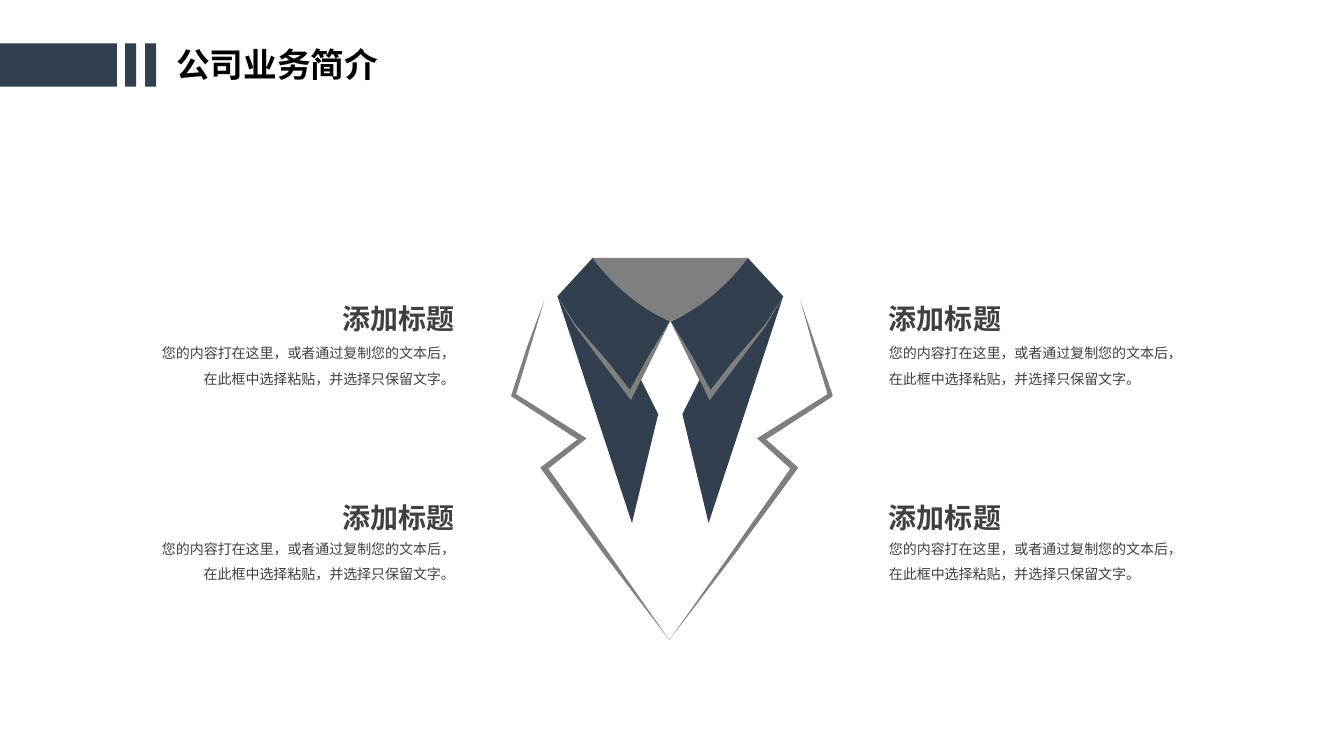
from dataclasses import dataclass

from pptx import Presentation
from pptx import util as u
from pptx.dml import color
from pptx.enum import shapes, text

CELL = u.Inches(0.1)
COLUMNS, ROWS = 133.33, 75
AXIS = 66.5
NAVY, GRAY, INK, BLACK = "323F4F", "7F7F7F", "404040", "000000"
HEADING = "添加标题"
BODY = "您的内容打在这里，或者通过复制您的文本后，在此框中选择粘贴，并选择只保留文字。"

Point = tuple[float, float]


@dataclass(frozen=True)
class Label:
    content: str
    column: float
    row: float
    columns: float
    rows: float
    size: int
    bold: bool = False
    hue: str = INK
    align: text.PP_ALIGN = text.PP_ALIGN.LEFT
    spacing: float = 1.0


@dataclass(frozen=True)
class Side:
    heading_column: float
    body_column: float
    body_columns: float
    heading_align: text.PP_ALIGN
    body_align: text.PP_ALIGN


@dataclass(frozen=True)
class Patch:
    points: list[Point]
    hue: str


@dataclass(frozen=True)
class Bar:
    column: float
    columns: float


def cells(count: float) -> int:
    return round(count * CELL)


def rgb(hue: str) -> color.RGBColor:
    return color.RGBColor.from_string(hue)


def curve(a: Point, b: Point, c: Point, d: Point, steps: int = 24) -> list[Point]:
    points = []
    for step in range(steps + 1):
        t = step / steps
        s = 1 - t
        weights = (s**3, 3 * s * s * t, 3 * s * t * t, t**3)
        x, y = (sum(w * p[i] for w, p in zip(weights, (a, b, c, d))) for i in (0, 1))
        points.append((x, y))
    return points


def mirror(points: list[Point]) -> list[Point]:
    return [(2 * AXIS - x, y) for x, y in points]


def paint(shape, hue: str) -> None:
    shape.shadow.inherit = False
    shape.fill.solid()
    shape.fill.fore_color.rgb = rgb(hue)
    shape.line.fill.background()


def draw_label(page, label: Label) -> None:
    box = page.shapes.add_textbox(
        cells(label.column), cells(label.row), cells(label.columns), cells(label.rows))
    frame = box.text_frame
    frame.word_wrap = True
    frame.auto_size = text.MSO_AUTO_SIZE.SHAPE_TO_FIT_TEXT
    para = frame.paragraphs[0]
    para.text = label.content
    para.alignment = label.align
    para.line_spacing = label.spacing
    para.font.name = "Arial"
    para.font.size = u.Pt(label.size)
    para.font.bold = label.bold
    para.font.color.rgb = rgb(label.hue)


def draw_patch(page, patch: Patch) -> None:
    start, *rest = [(cells(x), cells(y)) for x, y in patch.points]
    builder = page.shapes.build_freeform(*start)
    builder.add_line_segments(rest, close=True)
    paint(builder.convert_to_shape(), patch.hue)


def draw_bar(page, bar: Bar) -> None:
    shape = page.shapes.add_shape(
        shapes.MSO_SHAPE.RECTANGLE,
        cells(bar.column), cells(4.3), cells(bar.columns), cells(4.3))
    paint(shape, NAVY)


ALIGN = text.PP_ALIGN
SIDES = [
    Side(87.2, 87.2, 32.1, ALIGN.JUSTIFY, ALIGN.LEFT),
    Side(30.2, 14.8, 31.3, ALIGN.RIGHT, ALIGN.RIGHT),
]
HEADING_AND_BODY_ROWS = [(27.8, 32.9), (47.5, 52.3)]

LEFT_LAPEL = [
    (54, 29.8), (52.3, 34.4), (50.7, 39.3), (57.3, 43.6), (53.6, 46.4),
    (60, 55.1), (66.4, 63.5), (60.4, 54.9), (54.4, 46.5), (58.2, 43.5),
    (51.2, 39.1), (52.6, 34.5),
]
RIGHT_LAPEL = [
    (79.4, 29.8), (81, 34.5), (82.6, 39.2), (82.5, 39.4), (76, 43.6),
    (79.2, 46.4), (72.8, 55.1), (66.4, 63.5), (72.5, 54.9), (78.4, 46.5),
    (75.1, 43.5), (82.1, 39.1), (80.7, 34.5),
]
COLLAR_TOP, COLLAR_TIP = (58.8, 25.6), (66.45, 31.9)
LINING = (
    curve((74.2, 25.6), (73.3, 27.7), (72.1, 29.5), COLLAR_TIP)
    + curve(COLLAR_TIP, COLLAR_TIP, (62.6, 30.9), COLLAR_TOP)
)
COLLAR = [
    (55.3, 29.4), *curve(COLLAR_TOP, COLLAR_TOP, (61.6, 29.8), COLLAR_TIP),
    (63.6, 37.7), (65.3, 41.1), (62.7, 51.9),
]
TRIM = [
    COLLAR_TIP, (64.3, 35.4), (62.5, 38.7), (60.4, 36), (57.1, 32.2),
    (55.3, 29.4), (57, 32.3), (60, 36.3), (62.6, 39.7), (64.6, 35.6),
]
SUIT = [
    Patch(LEFT_LAPEL, GRAY),
    Patch(RIGHT_LAPEL, GRAY),
    Patch(LINING, GRAY),
    Patch(COLLAR, NAVY),
    Patch(mirror(COLLAR), NAVY),
    Patch(TRIM, GRAY),
    Patch(mirror(TRIM), GRAY),
]
BARS = [Bar(0, 11.6), Bar(12.4, 1.1), Bar(14.4, 1.1)]


def main() -> None:
    deck = Presentation()
    deck.slide_width, deck.slide_height = cells(COLUMNS), cells(ROWS)
    page = deck.slides.add_slide(deck.slide_layouts[6])
    for side in SIDES:
        for heading_row, body_row in HEADING_AND_BODY_ROWS:
            draw_label(page, Label(
                HEADING, side.heading_column, heading_row, 15.9, 6.1, 20,
                bold=True, align=side.heading_align, spacing=1.5))
            draw_label(page, Label(
                BODY, side.body_column, body_row, side.body_columns, 6, 10,
                align=side.body_align, spacing=1.5))
    for patch in SUIT:
        draw_patch(page, patch)
    draw_label(page, Label("公司业务简介", 16.5, 3.9, 35.2, 5, 24, bold=True, hue=BLACK))
    for bar in BARS:
        draw_bar(page, bar)
    deck.save("out.pptx")


if __name__ == "__main__":
    main()
